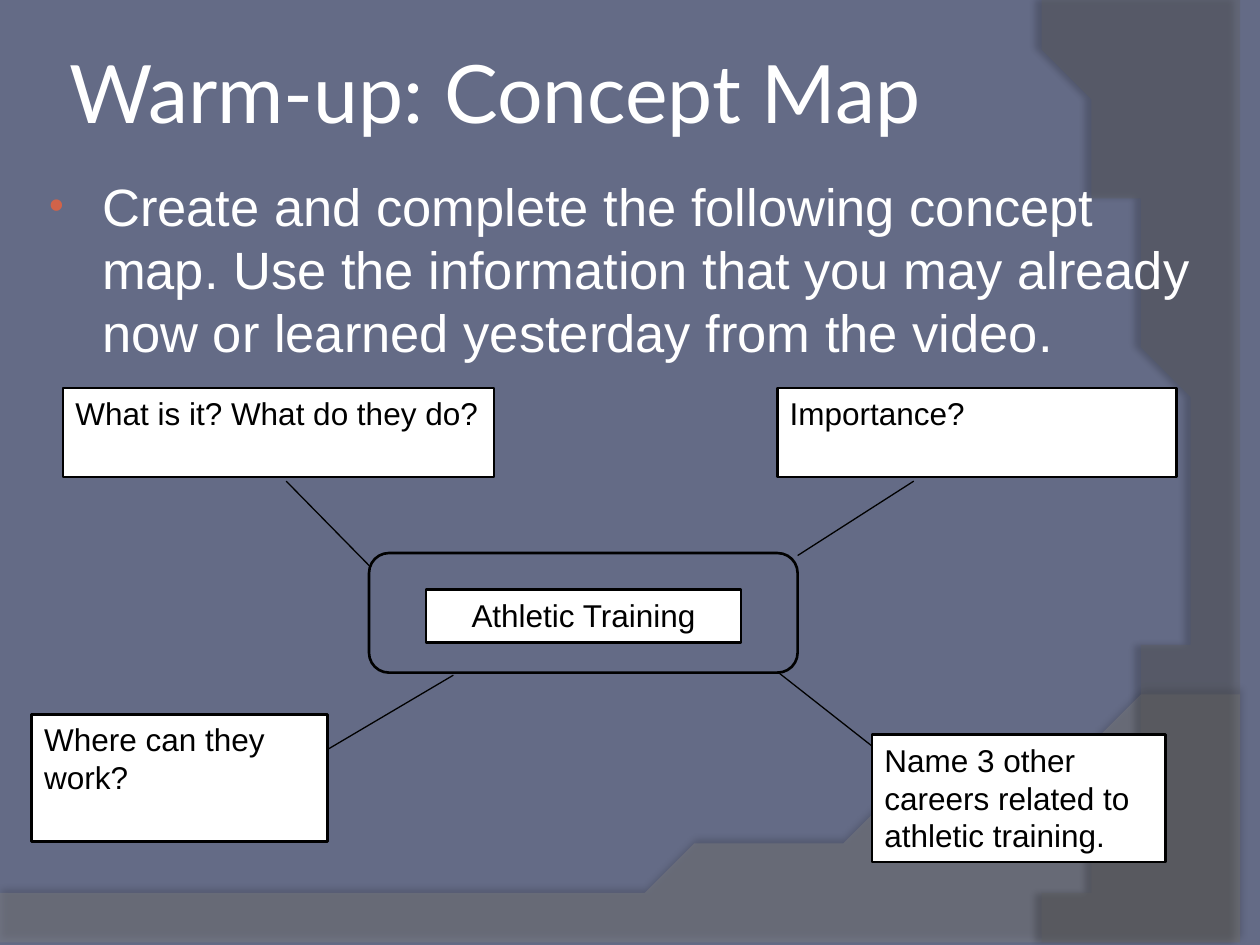
from pptx import Presentation
from pptx.dml.color import RGBColor
from pptx.enum.shapes import MSO_CONNECTOR as Link, MSO_SHAPE as Kind
from pptx.enum.text import MSO_ANCHOR as Anchor, PP_ALIGN as Align
from pptx.oxml import parse_xml
from pptx.oxml.ns import nsdecls, qn
from pptx.util import Cm, Pt
from lxml.etree import SubElement

# All places are in centimetres: left, top, width, height.
TITLE = "Warm-up: Concept Map"
TASK = ("Create and complete the following concept map. Use the information "
        "that you may already now or learned yesterday from the video.")
HUB = (7.44, 11.15, 8.64, 2.41)
LABELS = [
    ("Athletic Training", (8.59, 11.89, 6.35, 1.07), Align.CENTER),
    ("What is it? What do they do?", (1.27, 7.82, 8.69, 1.8), Align.LEFT),
    ("Importance?", (15.67, 7.82, 8.05, 1.8), Align.LEFT),
    ("Where can they work?", (0.64, 14.4, 5.97, 2.57), Align.LEFT),
    ("Name 3 other careers related to athletic training.",
     (17.58, 14.81, 5.92, 2.57), Align.LEFT),
]
SPOKES = [
    ((5.77, 9.7), (7.44, 11.4)),
    ((16.08, 11.2), (18.42, 9.7)),
    ((9.14, 13.61), (6.6, 15.11)),
    ((15.67, 13.54), (17.58, 15.04)),
]
# Straight corners, two curve handles, curve end, colour, opacity %,
# then shadow opacity %, blur pt, distance pt, direction in degrees
SWEEPS = [
    ([(0, 17.91), (0, 19.07), (25.4, 19.07), (25.4, 13.21)],
     (14.2, 18.52), (9.93, 18.26), (0, 17.91), "7F7F7F", 45, (35, 4, 3.5, 270)),
    ([(25.4, 0.05), (25.4, 19.05), (20.85, 19.05)],
     (23.75, 15.72), (25.86, 7.62), (20.32, 0), "5E5E5E", 40, (45, 4, 4, 180)),
]


def rgb(code):
    return RGBColor.from_string(code)


def curve(a, b, c, d, steps=48):
    """Points along a cubic Bezier curve, without its start."""
    for i in range(1, steps + 1):
        t = i / steps
        u = 1 - t
        yield tuple(u**3 * p + 3 * u * u * t * q + 3 * u * t * t * r + t**3 * s
                    for p, q, r, s in zip(a, b, c, d))


def sweep(corners, h1, h2, end, color, alpha, shade):
    dots = corners + list(curve(corners[-1], h1, h2, end))
    pen = slide.shapes.build_freeform(*dots[0], scale=Cm(1))
    pen.add_line_segments(dots[1:], close=True)
    shape = pen.convert_to_shape()
    shape.fill.solid()
    shape.fill.fore_color.rgb = rgb(color)
    shape.line.fill.background()
    props = shape._element.spPr
    tint = props.find(qn("a:solidFill"))[0]
    SubElement(tint, qn("a:alpha"), val=str(alpha * 1000))
    dark, blur, dist, angle = shade
    props.append(parse_xml(
        f'<a:effectLst {nsdecls("a")}><a:outerShdw blurRad="{Pt(blur)}" '
        f'dist="{Pt(dist)}" dir="{angle * 60000}" algn="ctr" rotWithShape="0">'
        f'<a:srgbClr val="000000"><a:alpha val="{dark * 1000}"/></a:srgbClr>'
        '</a:outerShdw></a:effectLst>'))


def write(shape, text, size, font, color, anchor=Anchor.TOP, align=Align.LEFT):
    frame = shape.text_frame
    frame.text = text
    frame.word_wrap = True
    frame.vertical_anchor = anchor
    par = frame.paragraphs[0]
    par.alignment = align
    face = par.runs[0].font
    face.size, face.name, face.color.rgb = Pt(size), font, rgb(color)
    return frame


def box(kind, place, fill=None):
    shape = slide.shapes.add_shape(kind, *map(Cm, place))
    shape.shadow.inherit = False
    if fill:
        shape.fill.solid()
        shape.fill.fore_color.rgb = rgb(fill)
    else:
        shape.fill.background()
    shape.line.color.rgb = rgb("000000")
    shape.line.width = Pt(1.5)
    return shape


def spoke(start, end):
    line = slide.shapes.add_connector(Link.STRAIGHT, *map(Cm, start + end))
    line.line.color.rgb = rgb("000000")
    line.line.width = Pt(0.75)
    SubElement(line._element.spPr, qn("a:effectLst"))


def bullet(par):
    par.space_before = Pt(6)
    props = par._p.get_or_add_pPr()
    props.set("marL", str(Cm(1.17)))
    props.set("indent", str(-Cm(1.07)))
    tint = SubElement(props, qn("a:buClr"))
    SubElement(tint, qn("a:srgbClr"), val="D16349")
    SubElement(props, qn("a:buSzPct"), val="80000")
    SubElement(props, qn("a:buFont"), typeface="Arial")
    SubElement(props, qn("a:buChar"), char="•")


deck = Presentation()
deck.slide_width, deck.slide_height = Cm(25.4), Cm(19.05)
slide = deck.slides.add_slide(deck.slide_layouts[6])
slide.background.fill.solid()
slide.background.fill.fore_color.rgb = rgb("646B86")

for item in SWEEPS:
    sweep(*item)

title = slide.shapes.add_textbox(Cm(1.27), Cm(0.25), Cm(24.13), Cm(3.18))
frame = write(title, TITLE, 46, "Lato", "FFFFFF", Anchor.MIDDLE)
frame.margin_left = frame.margin_right = Cm(0.13)
body = slide.shapes.add_textbox(Cm(0.64), Cm(3.38), Cm(23.7), Cm(15.67))
bullet(write(body, TASK, 30, "Arial", "FFFFFF").paragraphs[0])

box(Kind.ROUNDED_RECTANGLE, HUB)
for ends in SPOKES:
    spoke(*ends)
for text, place, align in LABELS:
    write(box(Kind.RECTANGLE, place, "FFFFFF"), text, 18, "Arial", "000000",
          align=align)

deck.save("out.pptx")
